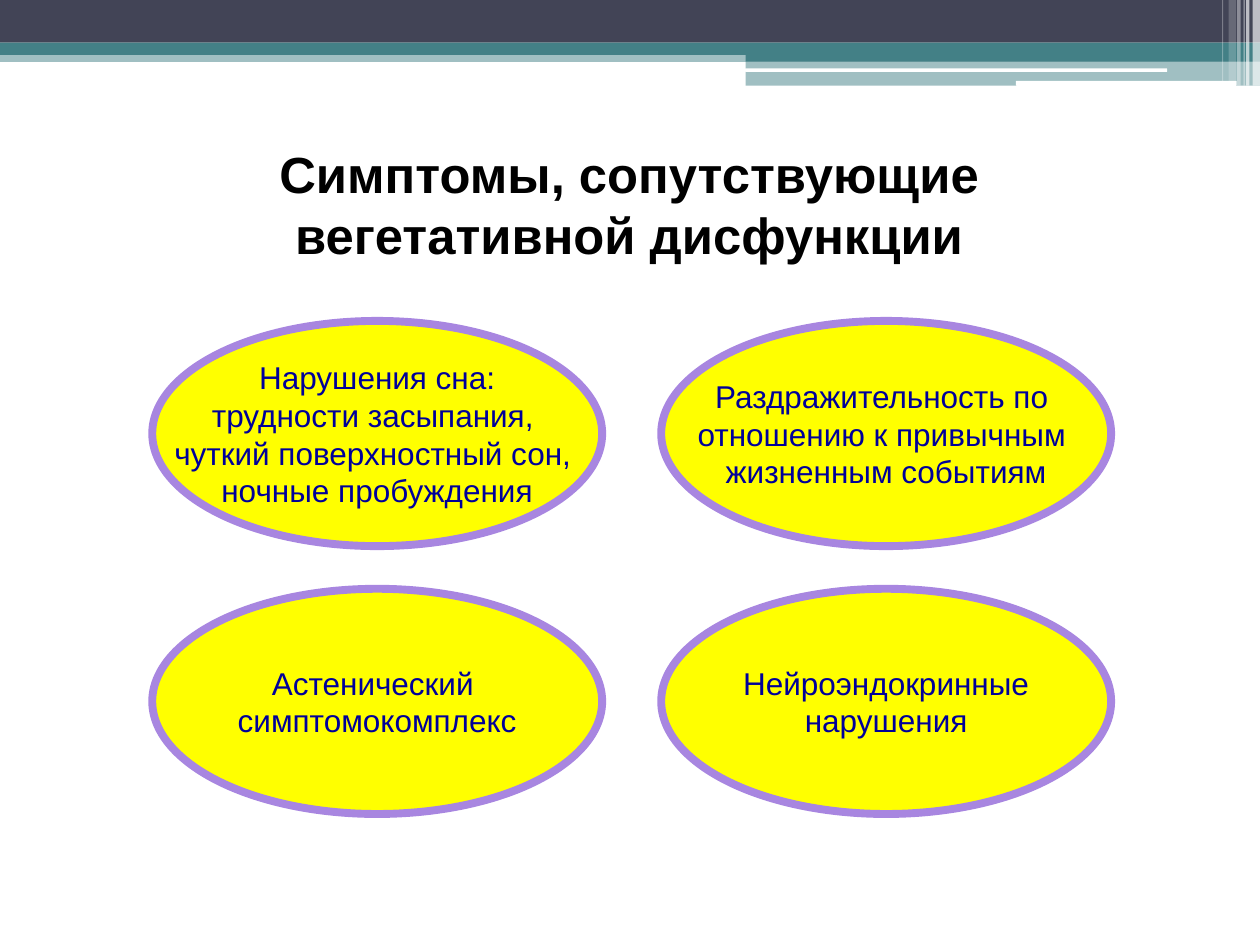
from lxml.etree import SubElement
from pptx import Presentation
from pptx.dml.color import RGBColor
from pptx.enum.shapes import MSO_SHAPE
from pptx.enum.text import MSO_ANCHOR, PP_ALIGN
from pptx.oxml.ns import qn
from pptx.util import Cm, Pt

WIDTH, HEIGHT = 25.4, 19.05
TEAL, SLATE, WHITE = "438086", "424456", "FFFFFF"

# Header bands: left, top, width, height in cm, colour, opacity in percent
BANDS = [
    (0, 1.02, WIDTH, 0.23, TEAL, 50),
    (0, 0, WIDTH, 0.86, SLATE, 100),
    (0, 0.86, WIDTH, 0.25, TEAL, 100),
    (15.03, 0.99, 10.37, 0.25, TEAL, 100),
    (15.03, 1.23, 10.37, 0.5, TEAL, 50),
]
# Rounded white rules: left, top, width, height
RULES = [(15.02, 1.38, 8.51, 0.07), (20.48, 1.63, 4.45, 0.1)]
# White stripes at the right edge: left, width, height, opacity
STRIPES = [
    (25.25, 0.15, 1.73, 65),
    (25.12, 0.07, 1.73, 65),
    (25.07, 0.02, 1.73, 60),
    (24.94, 0.07, 1.73, 40),
    (24.77, 0.15, 1.63, 20),
    (24.64, 0.02, 1.63, 30),
]

TITLE = "Симптомы, сопутствующие вегетативной дисфункции"
TITLE_FORMAT = {"name": "Arial", "size": Pt(29), "bold": True}
SYMPTOM_FORMAT = {"name": "Arial", "size": Pt(18), "bold": False}

# Rows of symptoms, each a list of lines
SYMPTOMS = [
    [
        ["Нарушения сна:", "трудности засыпания, ",
         "чуткий поверхностный сон, ", "ночные пробуждения"],
        ["Раздражительность по ", "отношению к привычным ",
         "жизненным событиям"],
    ],
    [
        ["Астенический ", "симптомокомплекс"],
        ["Нейроэндокринные", "нарушения"],
    ],
]
GRID_LEFT, GRID_TOP = 3.07, 6.47
OVAL_WIDTH, OVAL_HEIGHT = 9.07, 4.54
COLUMN_STEP, ROW_STEP = 10.26, 5.4


def rgb(code):
    return RGBColor.from_string(code)


def add_filled(slide, kind, box, color, opacity=100):
    part = slide.shapes.add_shape(kind, *map(Cm, box))
    part.shadow.inherit = False
    part.line.fill.background()
    part.fill.solid()
    part.fill.fore_color.rgb = rgb(color)
    if opacity < 100:
        code = part.fill._xPr.find(".//" + qn("a:srgbClr"))
        SubElement(code, qn("a:alpha"), val=str(opacity * 1000))
    return part


def write_lines(frame, lines, font_format, color, wrap):
    frame.word_wrap = wrap
    frame.vertical_anchor = MSO_ANCHOR.MIDDLE
    for index, line in enumerate(lines):
        paragraph = frame.add_paragraph() if index else frame.paragraphs[0]
        paragraph.alignment = PP_ALIGN.CENTER
        run = paragraph.add_run()
        run.text = line
        for attribute, value in font_format.items():
            setattr(run.font, attribute, value)
        run.font.color.rgb = rgb(color)


def main():
    deck = Presentation()
    deck.slide_width, deck.slide_height = Cm(WIDTH), Cm(HEIGHT)
    slide = deck.slides.add_slide(deck.slide_layouts[6])

    # Header
    for *box, color, opacity in BANDS:
        add_filled(slide, MSO_SHAPE.RECTANGLE, box, color, opacity)
    for box in RULES:
        add_filled(slide, MSO_SHAPE.ROUNDED_RECTANGLE, box, WHITE)
    for left, width, height, opacity in STRIPES:
        add_filled(slide, MSO_SHAPE.RECTANGLE, (left, 0, width, height),
                   WHITE, opacity)

    # Title
    title = slide.shapes.add_textbox(Cm(2.9), Cm(2.46), Cm(19.58), Cm(3.28))
    write_lines(title.text_frame, [TITLE], TITLE_FORMAT, "000000", True)

    # Symptom ovals
    for row, symptoms in enumerate(SYMPTOMS):
        for column, lines in enumerate(symptoms):
            box = (GRID_LEFT + column * COLUMN_STEP,
                   GRID_TOP + row * ROW_STEP, OVAL_WIDTH, OVAL_HEIGHT)
            oval = add_filled(slide, MSO_SHAPE.OVAL, box, "FFFF00")
            oval.line.color.rgb = rgb("A886E0")
            oval.line.width = Pt(4.5)
            write_lines(oval.text_frame, lines, SYMPTOM_FORMAT, "000099",
                        False)

    deck.save("out.pptx")


if __name__ == "__main__":
    main()
